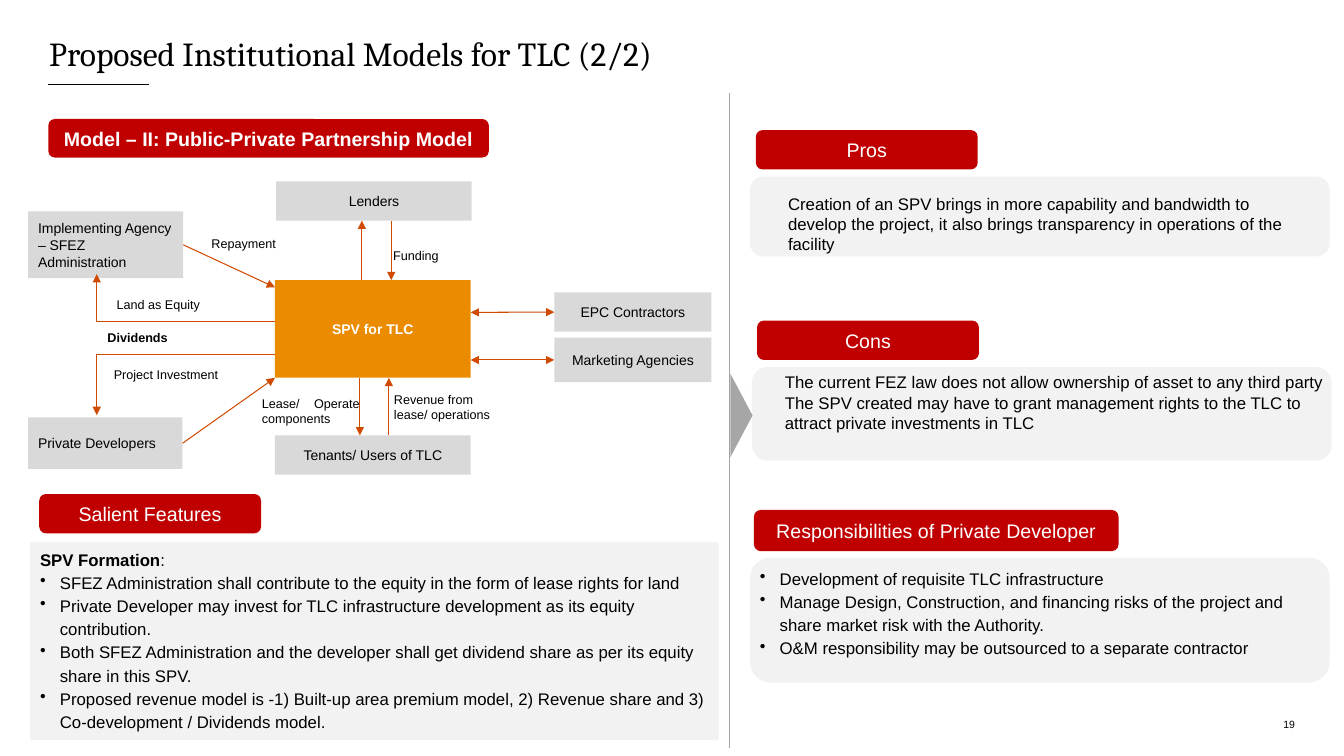
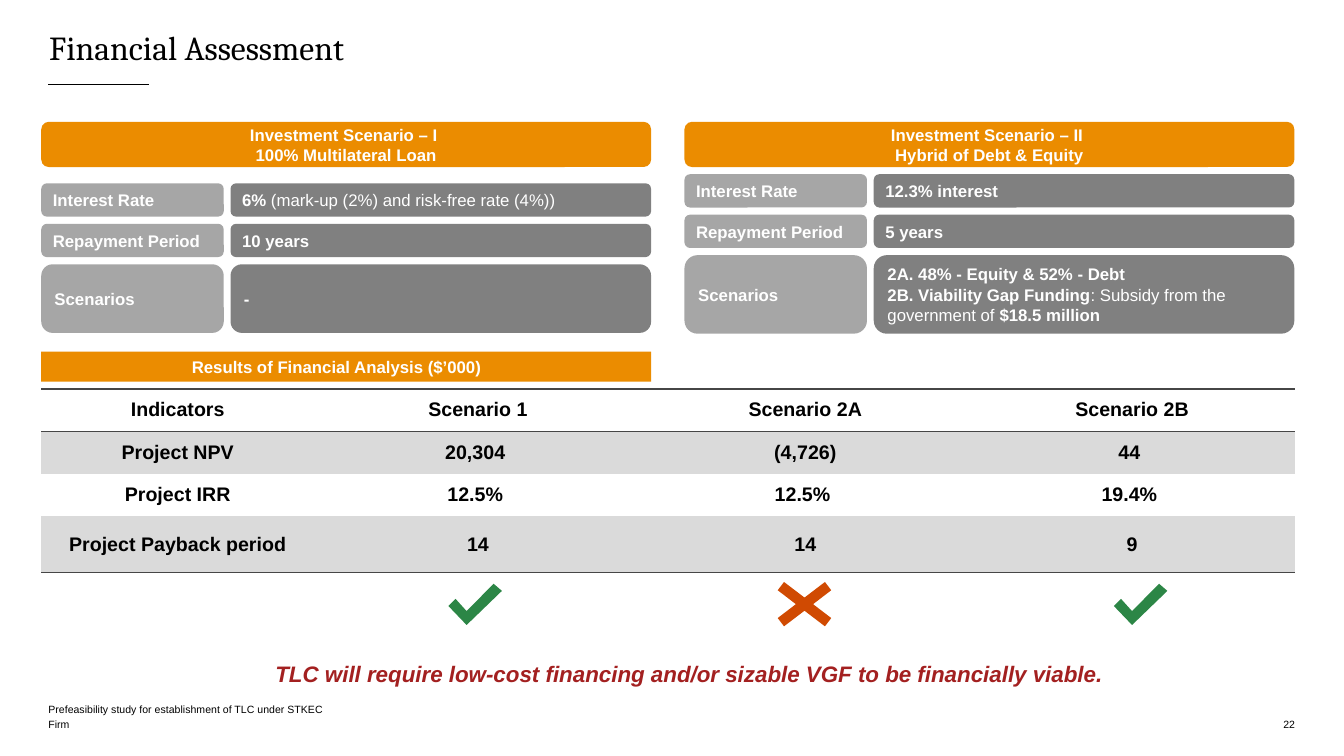
"""Build two slides on institutional models and financial assessment."""
from dataclasses import dataclass, replace
from typing import NamedTuple, Optional

from lxml import etree
from pptx import Presentation
from pptx import util as u
from pptx.dml.color import RGBColor
from pptx.enum import shapes, text
from pptx.oxml.ns import qn

LEFT, CENTER, RIGHT, JUSTIFY = (
    text.PP_ALIGN.LEFT, text.PP_ALIGN.CENTER, text.PP_ALIGN.RIGHT, text.PP_ALIGN.JUSTIFY)
TOP, MIDDLE, BOTTOM = (
    text.MSO_ANCHOR.TOP, text.MSO_ANCHOR.MIDDLE, text.MSO_ANCHOR.BOTTOM)
RECT, ROUND = shapes.MSO_SHAPE.RECTANGLE, shapes.MSO_SHAPE.ROUNDED_RECTANGLE
STRAIGHT, ELBOW = shapes.MSO_CONNECTOR.STRAIGHT, shapes.MSO_CONNECTOR.ELBOW


@dataclass(frozen=True)
class Theme:
    black: str = "000000"
    white: str = "FFFFFF"
    red: str = "C00000"
    crimson: str = "A32020"
    orange: str = "EB8C00"
    rust: str = "D04A02"
    green: str = "2C8646"
    panel: str = "F2F2F2"
    node: str = "D9D9D9"
    band: str = "DADADA"
    silver: str = "A6A6A6"
    gray: str = "808080"
    border: str = "464646"
    heading_font: str = "Cambria"
    body_font: str = "Arial"
    title: float = 24
    callout: float = 16
    badge: float = 14
    body: float = 12
    diagram: float = 10
    label: float = 9
    footer: float = 7.5


THEME = Theme()


class Box(NamedTuple):
    left: float
    top: float
    width: float
    height: float


class Span(NamedTuple):
    text: str
    bold: Optional[bool] = None


class Para(NamedTuple):
    spans: tuple[Span, ...]
    bullet: bool = False


@dataclass(frozen=True)
class Look:
    size: float
    color: str = THEME.black
    bold: bool = False
    italic: bool = False
    align: text.PP_ALIGN = LEFT
    anchor: text.MSO_ANCHOR = TOP
    insets: tuple[float, float, float, float] = (0.25, 0.13, 0.25, 0.13)
    spacing: Optional[float] = None
    font: str = THEME.body_font


class Link(NamedTuple):
    start: tuple[float, float]
    end: tuple[float, float]
    begin_node: str = ""
    end_node: str = ""
    double: bool = False
    elbow: bool = False


class Node(NamedTuple):
    name: str
    box: Box
    align: text.PP_ALIGN = CENTER


class Label(NamedTuple):
    name: str
    box: Box
    align: text.PP_ALIGN = JUSTIFY
    inset: float = 0.2
    bold: bool = False


class Scenario(NamedTuple):
    left: float
    top: float
    last_height: float
    heading: tuple[Para, ...]
    values: tuple[tuple[Para, ...], ...]


BODY = Look(THEME.body)
LIST = replace(BODY, spacing=1.15)
BADGE = Look(THEME.badge, THEME.white, align=CENTER, anchor=MIDDLE)
NODE = Look(THEME.diagram, anchor=MIDDLE, insets=(0.25, 0.1, 0.25, 0.1))
CARD = Look(THEME.body, THEME.white, bold=True, anchor=MIDDLE)
FOOTER = Look(THEME.footer, anchor=BOTTOM, insets=(0, 0, 0, 0))
TITLE = Look(THEME.title, anchor=MIDDLE, insets=(0, 0, 0, 0), spacing=0.85,
             font=THEME.heading_font)
CELL = Look(THEME.badge, bold=True, align=CENTER, anchor=MIDDLE)


def rgb(color: str) -> RGBColor:
    return RGBColor.from_string(color)


def place(box: Box) -> list[u.Cm]:
    return [u.Cm(value) for value in box]


def plain(*lines: str, bullet: bool = False) -> tuple[Para, ...]:
    return tuple(Para((Span(line),), bullet) for line in lines)


def write(frame, paras: tuple[Para, ...], look: Look) -> None:
    for index, para in enumerate(paras):
        target = frame.paragraphs[0] if index == 0 else frame.add_paragraph()
        target.alignment = look.align
        if look.spacing:
            target.line_spacing = look.spacing
        if para.bullet:
            props = target._p.get_or_add_pPr()
            props.set("marL", str(u.Cm(0.5)))
            props.set("indent", str(-u.Cm(0.5)))
            etree.SubElement(props, qn("a:buChar")).set("char", "•")
        for span in para.spans:
            run = target.add_run()
            run.text = span.text
            run.font.name, run.font.size = look.font, u.Pt(look.size)
            run.font.bold = look.bold if span.bold is None else span.bold
            run.font.italic = look.italic
            run.font.color.rgb = rgb(look.color)


def fill_frame(frame, paras: tuple[Para, ...], look: Look) -> None:
    frame.word_wrap = True
    frame.auto_size = text.MSO_AUTO_SIZE.NONE
    frame.vertical_anchor = look.anchor
    (frame.margin_left, frame.margin_top, frame.margin_right,
     frame.margin_bottom) = (u.Cm(value) for value in look.insets)
    write(frame, paras, look)


def paint(shape, color: str) -> None:
    shape.shadow.inherit = False
    shape.fill.solid()
    shape.fill.fore_color.rgb = rgb(color)
    shape.line.fill.background()


def add_box(page, box: Box, color: str, paras: tuple[Para, ...] = (),
            look: Look = BODY, kind: shapes.MSO_SHAPE = ROUND):
    shape = page.shapes.add_shape(kind, *place(box))
    paint(shape, color)
    if paras:
        fill_frame(shape.text_frame, paras, look)
    return shape


def add_text(page, box: Box, paras: tuple[Para, ...], look: Look) -> None:
    fill_frame(page.shapes.add_textbox(*place(box)).text_frame, paras, look)


def add_line(page, start: tuple[float, float], end: tuple[float, float], color: str,
             width: float = 1, kind: shapes.MSO_CONNECTOR = STRAIGHT,
             ends: tuple[str, ...] = ()):
    line = page.shapes.add_connector(kind, *(u.Cm(value) for value in (*start, *end)))
    line.line.color.rgb = rgb(color)
    line.line.width = u.Pt(width)
    for tag in ends:
        etree.SubElement(line.line._get_or_add_ln(), qn(tag)).set("type", "triangle")
    etree.SubElement(line._element.spPr, qn("a:effectLst"))
    return line


def add_link(page, link: Link, nodes: dict) -> None:
    ends = ("a:headEnd", "a:tailEnd") if link.double else ("a:tailEnd",)
    line = add_line(page, link.start, link.end, THEME.rust, 0.75,
                    ELBOW if link.elbow else STRAIGHT, ends)
    if link.begin_node:
        line.begin_connect(nodes[link.begin_node], 3)
    if link.end_node:
        line.end_connect(nodes[link.end_node], 1)
    if link.elbow:
        geometry = line._element.spPr.find(qn("a:prstGeom"))
        guides = geometry.find(qn("a:avLst"))
        if guides is None:
            guides = etree.SubElement(geometry, qn("a:avLst"))
        guide = etree.SubElement(guides, qn("a:gd"))
        guide.set("name", "adj1")
        guide.set("fmla", "val 100000")


def add_page(deck, title: str, title_box: Box, anchor: text.MSO_ANCHOR, number: str):
    page = deck.slides.add_slide(deck.slide_layouts[5])
    holder = page.shapes.title
    holder.left, holder.top, holder.width, holder.height = place(title_box)
    fill_frame(holder.text_frame, plain(title), replace(TITLE, anchor=anchor))
    add_line(page, (1.22, 2.13), (3.76, 2.13), THEME.black)
    add_text(page, Box(27.74, 18.03, 4.9, 0.38), plain(number),
             replace(FOOTER, align=RIGHT))
    return page


def add_diagram(page) -> None:
    boxes = (
        Node("Lenders", Box(6.96, 4.57, 4.93, 0.99)),
        Node("Implementing Agency – SFEZ Administration", Box(0.71, 5.33, 3.91, 1.68), LEFT),
        Node("SPV for TLC", Box(6.93, 7.06, 4.93, 2.46)),
        Node("Tenants/ Users of TLC", Box(6.93, 10.97, 4.93, 0.99)),
        Node("EPC Contractors", Box(13.97, 7.37, 3.96, 0.99)),
        Node("Marketing Agencies", Box(13.97, 8.51, 3.96, 1.12)),
        Node("Private Developers", Box(0.71, 10.52, 3.89, 1.3), LEFT),
    )
    nodes = {}
    for node in boxes:
        hub = node.name == "SPV for TLC"
        look = replace(NODE, align=node.align, bold=hub,
                       color=THEME.white if hub else THEME.black)
        nodes[node.name] = add_box(page, node.box, THEME.orange if hub else THEME.node,
                                   plain(node.name), look, RECT)
    for link in (
        Link((9.12, 7.06), (9.12, 5.56)),
        Link((9.86, 5.56), (9.86, 7.06)),
        Link((4.62, 6.17), (6.93, 7.24), begin_node=boxes[1].name),
        Link((11.86, 7.87), (13.97, 7.87), end_node="EPC Contractors", double=True),
        Link((11.86, 9.07), (13.97, 9.07), end_node="Marketing Agencies", double=True),
        Link((9.07, 9.52), (9.07, 10.97)),
        Link((9.8, 10.97), (9.8, 9.52)),
        Link((4.6, 11.17), (6.93, 9.52), begin_node="Private Developers"),
        Link((6.93, 8.94), (2.44, 10.46), elbow=True),
        Link((6.93, 8.1), (2.44, 6.91), elbow=True),
    ):
        add_link(page, link, nodes)
    for label in (
        Label("Repayment", Box(5.13, 5.94, 2.54, 0.53)),
        Label("Funding", Box(9.91, 6.25, 1.78, 0.51), LEFT, 0),
        Label("Land as Equity", Box(2.74, 7.47, 2.72, 0.51)),
        Label("Dividends", Box(2.51, 8.31, 3.51, 0.51), bold=True),
        Label("Project Investment", Box(2.67, 9.25, 3.33, 0.51)),
        Label("Lease/ Operate components", Box(6.6, 9.98, 2.46, 0.89), inset=0),
        Label("Revenue from lease/ operations", Box(9.93, 9.88, 2.84, 0.94), LEFT, 0),
    ):
        add_text(page, label.box, plain(label.name),
                 Look(THEME.label, bold=label.bold, align=label.align,
                      insets=(label.inset, 0, label.inset, 0)))


def build_models(deck) -> None:
    page = add_page(deck, "Proposed Institutional Models for TLC (2/2)",
                    Box(1.24, 0.41, 31.39, 2.01), MIDDLE, "19")
    features = (Para((Span("SPV Formation", True), Span(":"))),) + plain(
        "SFEZ Administration shall contribute to the equity in the form of lease rights for land",
        "Private Developer may invest for TLC infrastructure development as its equity contribution.",
        "Both SFEZ Administration and the developer shall get dividend share as per its equity "
        "share in this SPV.",
        "Proposed revenue model is -1) Built-up area premium model, 2) Revenue share and 3) "
        "Co-development / Dividends model.", bullet=True)
    add_box(page, Box(0.76, 13.67, 17.35, 4.98), THEME.panel, features,
            replace(LIST, insets=(0.25, 0.1, 0.25, 0)), RECT)
    add_diagram(page)
    for panel in (Box(18.9, 4.45, 14.61, 2.01), Box(18.95, 9.25, 14.61, 2.36),
                  Box(18.9, 14.05, 14.61, 3.15)):
        add_box(page, panel, THEME.panel)
    for name, box, bold in (
        ("Model – II: Public-Private Partnership Model", Box(1.22, 3, 11.1, 0.97), True),
        ("Salient Features", Box(0.99, 12.45, 5.59, 0.99), False),
        ("Pros", Box(19.05, 3.28, 5.59, 0.99), False),
        ("Cons", Box(19.08, 8.08, 5.59, 0.99), False),
        ("Responsibilities of Private Developer", Box(19, 12.85, 9.19, 1.04), False),
    ):
        add_box(page, box, THEME.red, plain(name), replace(BADGE, bold=bold))
    add_text(page, Box(19.61, 4.75, 13.61, 1.8), plain(
        "Creation of an SPV brings in more capability and bandwidth to develop the project, "
        "it also brings transparency in operations of the facility"), BODY)
    add_text(page, Box(19.53, 9.25, 14.3, 1.8), plain(
        "The current FEZ law does not allow ownership of asset to any third party",
        "The SPV created may have to grant management rights to the TLC to attract private "
        "investments in TLC"), BODY)
    add_text(page, Box(18.9, 14.12, 14.3, 2.57), plain(
        "Development of requisite TLC infrastructure",
        "Manage Design, Construction, and financing risks of the project and share market risk "
        "with the Authority.",
        "O&M responsibility may be outsourced to a separate contractor", bullet=True), LIST)
    add_line(page, (18.39, 2.34), (18.39, 18.85), THEME.silver)
    pointer = add_box(page, Box(17.63, 10.19, 2.11, 0.56), THEME.silver,
                      kind=shapes.MSO_SHAPE.ISOSCELES_TRIANGLE)
    pointer.rotation = 90


def add_scenario(page, scenario: Scenario) -> None:
    add_box(page, Box(scenario.left, 3.07, 15.37, 1.14), THEME.orange, scenario.heading,
            replace(CARD, align=CENTER))
    names = ("Interest Rate", "Repayment Period", "Scenarios")
    heights = (0.84, 0.84, scenario.last_height)
    for row, (name, value, height) in enumerate(zip(names, scenario.values, heights)):
        top = scenario.top + row * 1.02
        add_box(page, Box(scenario.left, top, 4.6, height), THEME.silver, plain(name), CARD)
        add_box(page, Box(scenario.left + 4.77, top, 10.6, height), THEME.gray, value, CARD)


def add_border(cell, tag: str) -> None:
    edge = etree.Element(qn(tag))
    edge.set("w", str(u.Pt(1)))
    solid = etree.SubElement(edge, qn("a:solidFill"))
    etree.SubElement(solid, qn("a:srgbClr")).set("val", THEME.border)
    props = cell._tc.get_or_add_tcPr()
    props.insert(len(props.findall(qn("a:lnT"))), edge)


def add_results(page) -> None:
    rows = (("Indicators", "Scenario 1", "Scenario 2A", "Scenario 2B"),
            ("Project NPV", "20,304 ", "(4,726)", "44 "),
            ("Project IRR", "12.5% ", "12.5% ", "19.4% "),
            ("Project Payback period", "14", "14", "9"))
    table = page.shapes.add_table(4, 4, *place(Box(1.04, 9.8, 31.6, 4.62))).table
    style = table._tbl.tblPr.find(qn("a:tableStyleId"))
    style.text = "{2D5ABB26-0587-4C30-8999-92F81FD0307C}"
    for column, width in zip(table.columns, (6.88, 8.25, 8.25, 8.22)):
        column.width = u.Cm(width)
    for index, (height, values) in enumerate(zip((1.07, 1.07, 1.07, 1.42), rows)):
        table.rows[index].height = u.Cm(height)
        for cell, value in zip(table.rows[index].cells, values):
            cell.vertical_anchor = MIDDLE
            cell.margin_left = cell.margin_right = u.Cm(0.18)
            cell.margin_top = cell.margin_bottom = u.Cm(0)
            write(cell.text_frame, plain(value), CELL)
            if index % 2:
                cell.fill.solid()
                cell.fill.fore_color.rgb = rgb(THEME.band)
            else:
                cell.fill.background()
            if index == 0:
                add_border(cell, "a:lnT")
            if index in (0, 3):
                add_border(cell, "a:lnB")


def add_check(page, left: float, top: float) -> None:
    outline = ((1.14, 0), (0.46, 0.69), (0.18, 0.38), (0, 0.56), (0.46, 1.04), (1.35, 0.18))
    points = [(u.Cm(left + x), u.Cm(top + y)) for x, y in outline]
    builder = page.shapes.build_freeform(*points[0])
    builder.add_line_segments(points[1:], close=True)
    paint(builder.convert_to_shape(), THEME.green)


def build_assessment(deck) -> None:
    page = add_page(deck, "Financial Assessment", Box(1.24, 0.84, 31.39, 1.14), TOP, "22")
    for scenario in (
        Scenario(1.04, 4.62, 1.73, plain("Investment Scenario – I ", "100% Multilateral Loan"),
                 ((Para((Span("6% "), Span("(mark-up (2%) and risk-free rate (4%))", False))),),
                  plain("10 years"), plain("-"))),
        Scenario(17.25, 4.39, 1.98, plain("Investment Scenario – II ", "Hybrid of Debt & Equity"),
                 (plain("12.3% interest"), plain("5 years"),
                  plain("2A. 48% - Equity & 52% - Debt") + (Para((
                      Span("2B. Viability Gap Funding"),
                      Span(": Subsidy from the government of ", False),
                      Span("$18.5 million"))),))),
    ):
        add_scenario(page, scenario)
    add_results(page)
    add_box(page, Box(1.04, 8.86, 15.37, 0.76), THEME.orange,
            plain("Results of Financial Analysis ($’000)"),
            replace(CARD, align=CENTER, insets=(0.25, 0, 0.73, 0)), RECT)
    cross = add_box(page, Box(19.13, 14.35, 2.29, 1.75), THEME.rust,
                    kind=shapes.MSO_SHAPE.MATH_MULTIPLY)
    cross.adjustments[0] = 0.15
    for left in (11.3, 28.07):
        add_check(page, left, 14.71)
    add_box(page, Box(1.22, 16.46, 32.31, 1.02), THEME.white,
            plain("TLC will require low-cost financing and/or sizable VGF to be financially viable."),
            Look(THEME.callout, THEME.crimson, True, True, CENTER, MIDDLE))
    for top, line in ((17.65, "Prefeasibility study for establishment of TLC under STKEC"),
                      (18.03, "Firm")):
        add_text(page, Box(1.22, top, 15.21, 0.38), plain(line), FOOTER)


def main() -> None:
    deck = Presentation()
    deck.slide_width, deck.slide_height = u.Cm(33.87), u.Cm(19.05)
    build_models(deck)
    build_assessment(deck)
    deck.save("out.pptx")


if __name__ == "__main__":
    main()
